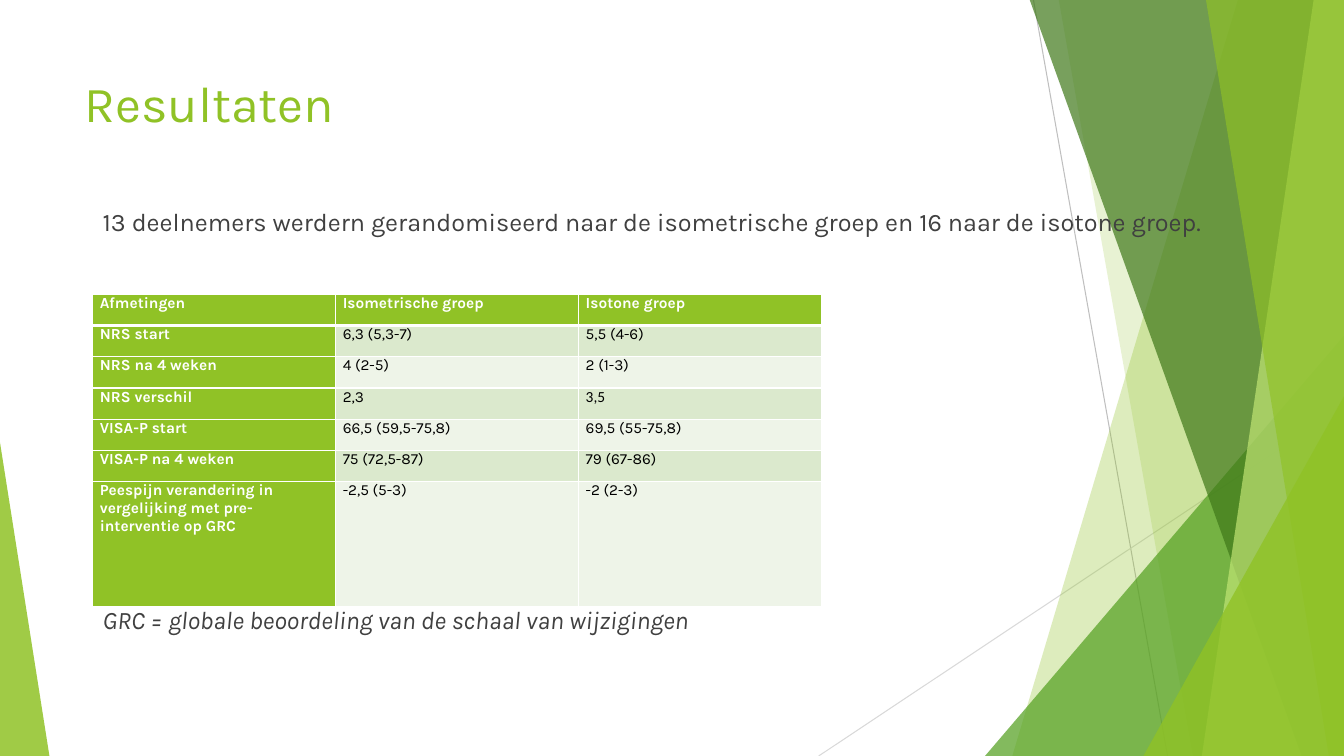
"""Build the results slide: title, statement, table of measurements and green facets."""
from lxml import etree
from pptx import Presentation
from pptx.dml.color import RGBColor
from pptx.enum.shapes import MSO_CONNECTOR, MSO_SHAPE
from pptx.oxml import parse_xml
from pptx.oxml.ns import nsdecls, qn
from pptx.util import Inches, Pt

STRAIGHT = MSO_CONNECTOR.STRAIGHT
TRIANGLE = MSO_SHAPE.ISOSCELES_TRIANGLE
GREEN, WHITE, BLACK, GREY = "90C226", "FFFFFF", "000000", "404040"
WIDTH, HEIGHT, TOP = 13.33, 7.5, -0.01


def rgb(color):
    return RGBColor.from_string(color)


def style(r, size, color, bold=False, italic=False, name="Karla"):
    r.font.name, r.font.size = name, Pt(size)
    r.font.bold, r.font.italic = bold, italic
    r.font.color.rgb = rgb(color)


prs = Presentation()
prs.slide_width, prs.slide_height = Inches(WIDTH), Inches(HEIGHT)
s = prs.slides.add_slide(prs.slide_layouts[6])

for x1, y1, x2, y2, color in [
    (10.25, 0, 11.58, 7.5, "BFBFBF"),
    (13.33, 4.03, 8.12, 7.5, "D9D9D9"),
]:
    line = s.shapes.add_connector(STRAIGHT, Inches(x1), Inches(y1), Inches(x2), Inches(y2))
    line.line.color.rgb = rgb(color)
    line.line.width = Pt(0.75)
    etree.SubElement(line._element.spPr, qn("a:effectLst"))

# Bands give their top and bottom left x; triangles give left, top, width and apex.
facets = [
    ((12.28, 10.04), GREEN, 30),
    ((10.5, 11.83), GREEN, 20),
    ((9.77, 3.33, 3.56, 1), "54A021", 72),
    ((10.21, 12.91), "3F7819", 70),
    ((13.03, 11.92), "C0E474", 70),
    ((11.96, 13.18), GREEN, 65),
    ((11.34, 3.93, 1.99, 1), GREEN, 80),
    ((0, 4.39, 0.49, 0), GREEN, 85),
]
for geometry, color, opacity in facets:
    if len(geometry) == 2:
        top_x, bottom_x = geometry
        outline = s.shapes.build_freeform(Inches(top_x), Inches(TOP))
        corners = [(WIDTH, TOP), (WIDTH, HEIGHT), (bottom_x, HEIGHT)]
        outline.add_line_segments([(Inches(x), Inches(y)) for x, y in corners])
        facet = outline.convert_to_shape()
    else:
        left, top, width, apex = geometry
        facet = s.shapes.add_shape(TRIANGLE, Inches(left), Inches(top), Inches(width), Inches(HEIGHT - top))
        facet.adjustments[0] = apex
    facet.shadow.inherit = False
    facet.line.fill.background()
    facet.fill.solid()
    facet.fill.fore_color.rgb = rgb(color)
    fill_color = facet._element.spPr.find(qn("a:solidFill"))[0]
    etree.SubElement(fill_color, qn("a:alpha"), val=str(opacity * 1000))

for text, left, top, width, height, size, color, italic in [
    ("Resultaten", 0.74, 0.67, 9.4, 1.44, 36, GREEN, False),
    ("13 deelnemers werdern gerandomiseerd naar de isometrische groep en 16 naar de isotone groep.",
     0.92, 2, 11.5, 0.4, 18, GREY, False),
    ("GRC = globale beoordeling van de schaal van wijzigingen", 0.92, 5.95, 11.5, 0.4, 18, GREY, True),
]:
    sp = s.shapes.add_textbox(Inches(left), Inches(top), Inches(width), Inches(height))
    tf = sp.text_frame
    tf.word_wrap = True
    tf.text = text
    style(tf.paragraphs[0].runs[0], size, color, italic=italic)

rows = [
    ("Afmetingen", "Isometrische groep", "Isotone groep"),
    ("NRS start", "6,3 (5,3-7)", "5,5 (4-6)"),
    ("NRS na 4 weken", "4 (2-5)", "2 (1-3)"),
    ("NRS verschil", "2,3", "3,5"),
    ("VISA-P start", "66,5 (59,5-75,8)", "69,5 (55-75,8)"),
    ("VISA-P na 4 weken", "75 (72,5-87)", "79 (67-86)"),
    ("Peespijn verandering in vergelijking met pre-interventie op GRC", "-2,5 (5-3)", "-2 (2-3)"),
]
row_height = 0.31
table = s.shapes.add_table(len(rows), 3, Inches(0.92), Inches(2.92), Inches(7.23), Inches(3.1)).table
for column in table.columns:
    column.width = Inches(2.41)
for i, values in enumerate(rows):
    table.rows[i].height = Inches(row_height * (4 if i == len(rows) - 1 else 1))
    for j, value in enumerate(values):
        cell = table.cell(i, j)
        heading = i == 0 or j == 0
        cell.margin_left = cell.margin_right = Inches(0.07)
        cell.margin_top = cell.margin_bottom = 0
        for side in "LRTB":
            thick = (i, side) in [(0, "B"), (1, "T")]
            cell._tc.get_or_add_tcPr().append(parse_xml(
                f'<a:ln{side} {nsdecls("a")} w="{Pt(3 if thick else 1)}"><a:solidFill>'
                f'<a:srgbClr val="{WHITE}"/></a:solidFill></a:ln{side}>'))
        cell.fill.solid()
        cell.fill.fore_color.rgb = rgb(GREEN if heading else "DBE9CD" if i % 2 else "EEF4E8")
        cell.text_frame.text = value
        style(cell.text_frame.paragraphs[0].runs[0], 11, WHITE if heading else BLACK, bold=heading,
              name="Calibri" if value == "3,5" else "Karla")

prs.save("out.pptx")
